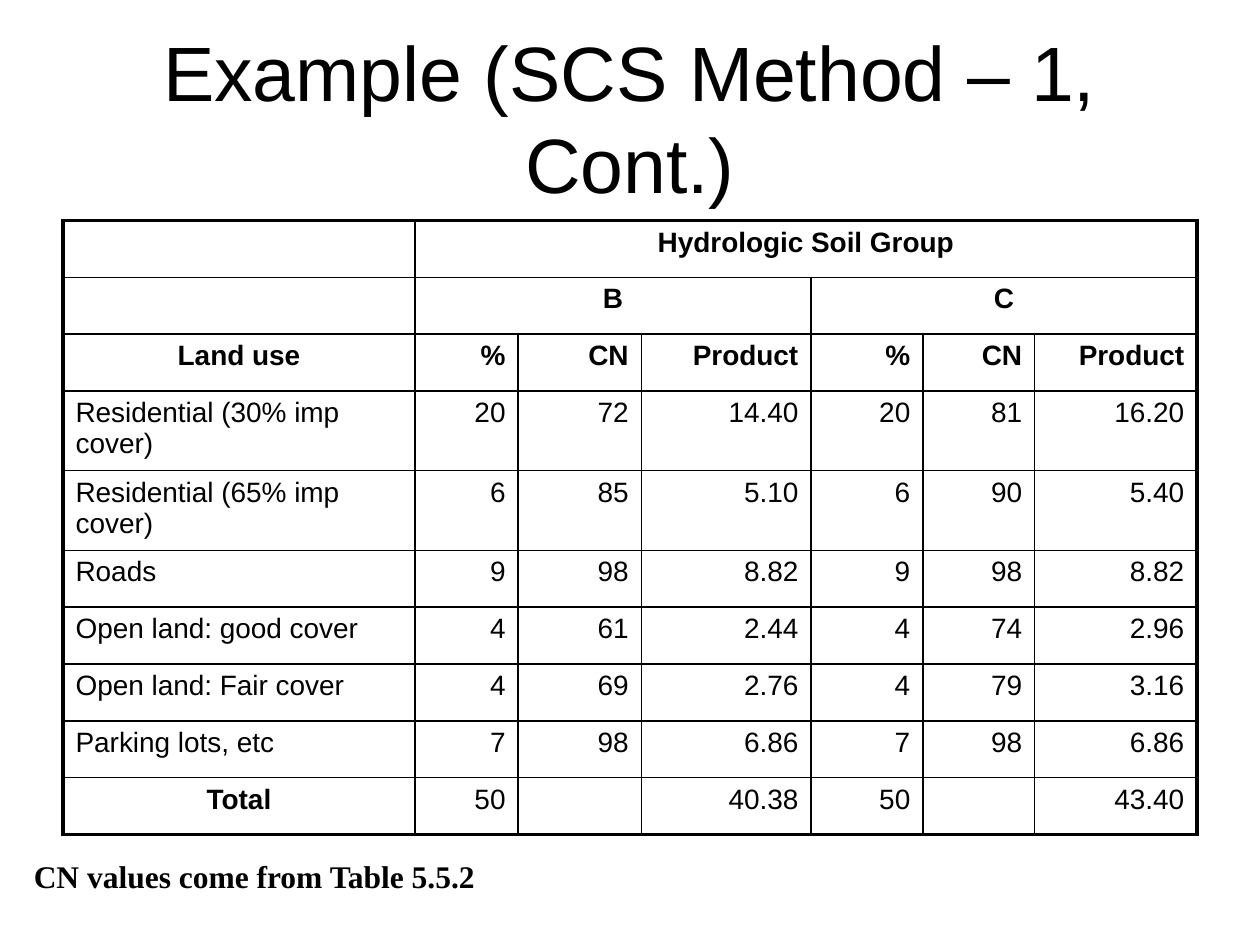
from dataclasses import dataclass

from lxml.etree import SubElement
from pptx import Presentation
from pptx.dml.color import RGBColor
from pptx.enum.text import MSO_ANCHOR as Anchor, MSO_AUTO_SIZE as AutoSize, PP_ALIGN as Align
from pptx.oxml.ns import qn
from pptx.util import Inches, Pt

SLIDE_W, SLIDE_H = Inches(10), Inches(7.5)


@dataclass(frozen=True)
class Theme:
    ink: RGBColor = RGBColor(0, 0, 0)
    sans: str = "Arial"
    serif: str = "Times New Roman"
    title: float = 44
    note: float = 18
    cell: float = 16
    outer_line: float = 2.25
    inner_line: float = 1


THEME = Theme()

# Column and row proportions of the table
COLUMNS = [2.8, 0.82, 0.98, 1.35, 0.89, 0.89, 1.29]
ROWS = [0.45] * 3 + [0.63] * 2 + [0.45] * 5

HEADINGS = ["%", "CN", "Product"]
TABLE_ROWS = [
    ["", "Hydrologic Soil Group", "", "", "", "", ""],
    ["", "B", "", "", "C", "", ""],
    ["Land use", *HEADINGS, *HEADINGS],
    ["Residential (30% imp cover)", "20", "72", "14.40", "20", "81", "16.20"],
    ["Residential (65% imp cover)", "6", "85", "5.10", "6", "90", "5.40"],
    ["Roads", "9", "98", "8.82", "9", "98", "8.82"],
    ["Open land: good cover", "4", "61", "2.44", "4", "74", "2.96"],
    ["Open land: Fair cover", "4", "69", "2.76", "4", "79", "3.16"],
    ["Parking lots, etc", "7", "98", "6.86", "7", "98", "6.86"],
    ["Total", "50", "", "40.38", "50", "", "43.40"],
]
HEADER_ROWS = 3
SPANS = {(0, 1): 6, (1, 1): 3, (1, 4): 3}


def share(left, top, width, height):
    """Turn shares of the slide's size into a box in slide units."""
    return (int(left * SLIDE_W), int(top * SLIDE_H),
            int(width * SLIDE_W), int(height * SLIDE_H))


def style(para, face, size, bold=False, align=Align.LEFT):
    para.alignment = align
    font = para.font
    font.name, font.size, font.bold = face, Pt(size), bold
    font.color.rgb = THEME.ink


def add_title(page, box, text):
    title = page.shapes.title
    title.left, title.top, title.width, title.height = box
    frame = title.text_frame
    frame.text = text
    frame.auto_size = AutoSize.NONE
    frame.vertical_anchor = Anchor.MIDDLE
    style(frame.paragraphs[0], THEME.sans, THEME.title, align=Align.CENTER)


def set_borders(cell, outer_sides):
    """Draw the four sides, heavier on the table's outer edge."""
    properties = cell._tc.get_or_add_tcPr()
    for place, side in enumerate("LRTB"):
        weight = THEME.outer_line if side in outer_sides else THEME.inner_line
        line = SubElement(properties, qn(f"a:ln{side}"), w=str(Pt(weight)))
        fill = SubElement(line, qn("a:solidFill"))
        SubElement(fill, qn("a:srgbClr"), val=str(THEME.ink))
        properties.insert(place, line)


def cell_style(row, col):
    """Return whether a cell is bold, and its alignment."""
    last = len(TABLE_ROWS) - 1
    bold = row < HEADER_ROWS or (row == last and col == 0)
    if (row, col) in SPANS or (bold and col == 0):
        return bold, Align.CENTER
    return bold, Align.LEFT if col == 0 else Align.RIGHT


def add_curve_number_table(page, box):
    left, top, width, height = box
    row_count, col_count = len(ROWS), len(COLUMNS)
    table = page.shapes.add_table(row_count, col_count, *box).table
    table.first_row = table.horz_banding = False

    # Grid sizes
    for column, weight in zip(table.columns, COLUMNS):
        column.width = int(width * weight / sum(COLUMNS))
    for row, weight in zip(table.rows, ROWS):
        row.height = int(height * weight / sum(ROWS))

    # Group headings across several columns
    for (row, col), span in SPANS.items():
        table.cell(row, col).merge(table.cell(row, col + span - 1))

    # Text and borders
    for row, texts in enumerate(TABLE_ROWS):
        for col, text in enumerate(texts):
            cell = table.cell(row, col)
            cell.fill.background()
            end = col + SPANS.get((row, col), 1)
            edges = {"L": col == 0, "R": end == col_count,
                     "T": row == 0, "B": row == row_count - 1}
            set_borders(cell, [side for side, outer in edges.items() if outer])
            if not cell.is_spanned:
                cell.text = text
                bold, align = cell_style(row, col)
                style(cell.text_frame.paragraphs[0], THEME.sans, THEME.cell, bold, align)


def add_note(page, box, text):
    frame = page.shapes.add_textbox(*box).text_frame
    frame.word_wrap = True
    frame.auto_size = AutoSize.SHAPE_TO_FIT_TEXT
    frame.text = text
    style(frame.paragraphs[0], THEME.serif, THEME.note, bold=True)


def main():
    deck = Presentation()
    deck.slide_width, deck.slide_height = SLIDE_W, SLIDE_H
    page = deck.slides.add_slide(deck.slide_layouts.get_by_name("Title Only"))
    add_title(page, share(0.05, 0.04, 0.9, 1 / 6), "Example (SCS Method – 1, Cont.)")
    add_curve_number_table(page, share(0.05, 7 / 30, 0.9, 0.65))
    add_note(page, share(0.017, 0.9, 0.39, 0.053), "CN values come from Table 5.5.2")
    deck.save("out.pptx")


if __name__ == "__main__":
    main()
